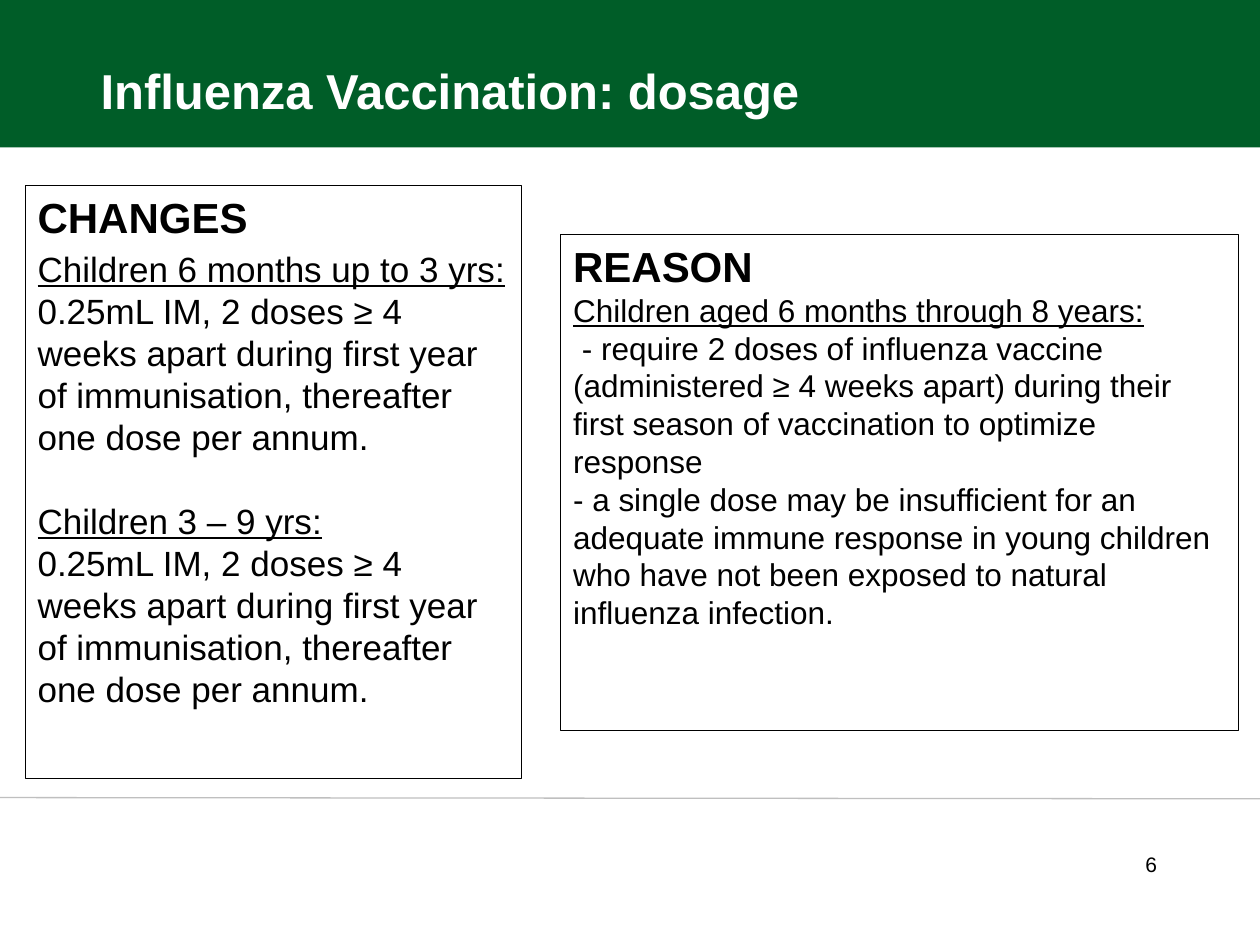
from lxml import etree
from pptx import Presentation
from pptx import util as u
from pptx.dml.color import RGBColor
from pptx.enum import shapes, text
from pptx.oxml.ns import qn

GREEN = RGBColor(0x00, 0x5D, 0x28)
GRAY = RGBColor(0xBF, 0xBF, 0xBF)
BLACK = RGBColor(0x00, 0x00, 0x00)
WHITE = RGBColor(0xFF, 0xFF, 0xFF)

DOSAGE = ("0.25mL IM, 2 doses ≥ 4 weeks apart during first year of "
          "immunisation, thereafter one dose per annum.")


class SlideBuilder:
    """Holds the style and the current slide."""

    font_name = "Arial"
    line_width = u.Pt(0.75)
    leading = 1.2

    def __init__(self, slide):
        self.slide = slide

    def rectangle(self, box, fill=None, line=None):
        shape = self.slide.shapes.add_shape(
            shapes.MSO_SHAPE.RECTANGLE, *map(u.Inches, box))
        shape.shadow.inherit = False
        if fill is None:
            shape.fill.background()
        else:
            shape.fill.solid()
            shape.fill.fore_color.rgb = fill
        if line is None:
            shape.line.fill.background()
        else:
            shape.line.color.rgb = line
            shape.line.width = self.line_width
        return shape

    def rule(self, start, end, color):
        connector = self.slide.shapes.add_connector(
            shapes.MSO_CONNECTOR.STRAIGHT, *map(u.Inches, start + end))
        connector.line.color.rgb = color
        connector.line.width = self.line_width
        etree.SubElement(connector._element.spPr, qn("a:effectLst"))

    def style_text(self, paragraph, wording, color, size, spacing=None, **font):
        paragraph.text = wording
        paragraph.font.color.rgb = color
        font_format = {"name": self.font_name, "size": u.Pt(size), **font}
        paragraph_format = {"alignment": text.PP_ALIGN.LEFT, **(spacing or {})}
        for target, values in ((paragraph.font, font_format),
                               (paragraph, paragraph_format)):
            for name, value in values.items():
                setattr(target, name, value)

    def label(self, box, wording, color, size,
              anchor=text.MSO_ANCHOR.TOP, spacing=None, **font):
        shape = self.slide.shapes.add_textbox(*map(u.Inches, box))
        frame = shape.text_frame
        frame.word_wrap = True
        frame.vertical_anchor = anchor
        self.style_text(frame.paragraphs[0], wording, color, size, spacing,
                        **font)

    def panel(self, box, heading, size, rows, heading_gap=0):
        """Outlined box; each row is (wording, underlined, points before)."""
        frame = self.rectangle(box, line=BLACK).text_frame
        frame.word_wrap = True
        frame.vertical_anchor = text.MSO_ANCHOR.TOP
        heading_size = 24
        self.style_text(frame.paragraphs[0], heading, BLACK, heading_size,
                        {"line_spacing": u.Pt(heading_size * self.leading),
                         "space_after": u.Pt(heading_gap)}, bold=True)
        for wording, underlined, before in rows:
            self.style_text(frame.add_paragraph(), wording, BLACK, size,
                            {"line_spacing": u.Pt(size * self.leading),
                             "space_before": u.Pt(before)},
                            underline=underlined)


def main():
    presentation = Presentation()
    presentation.slide_width = u.Inches(10)
    presentation.slide_height = u.Inches(7.5)
    builder = SlideBuilder(
        presentation.slides.add_slide(presentation.slide_layouts[6]))

    # Header band, footer rule and page number
    builder.rectangle((0, 0, 10, 1.17), fill=GREEN)
    builder.rule((0, 6.33), (10, 6.34), GRAY)
    builder.label((4.13, 6.71, 5.15, 0.79), "6", BLACK, 12,
                  spacing={"alignment": text.PP_ALIGN.RIGHT})

    # Title
    builder.label((0.7, -0.08, 6.08, 1.08), "Influenza Vaccination: dosage",
                  WHITE, 28, anchor=text.MSO_ANCHOR.BOTTOM, bold=True)

    # Changes and the reason for them
    builder.panel((0.2, 1.47, 3.94, 4.71), "CHANGES", 20, [
        ("Children 6 months up to 3 yrs:", True, 0),
        (DOSAGE, False, 0),
        ("Children 3 – 9 yrs:", True, 24),
        (DOSAGE, False, 0),
    ], heading_gap=3)
    builder.panel((4.45, 1.86, 5.38, 3.94), "REASON", 18, [
        ("Children aged 6 months through 8 years:", True, 0),
        (" - require 2 doses of influenza vaccine (administered ≥ 4 weeks "
         "apart) during their first season of vaccination to optimize "
         "response", False, 0),
        ("- a single dose may be insufficient for an adequate immune response "
         "in young children who have not been exposed to natural influenza "
         "infection.", False, 0),
    ])

    presentation.save("out.pptx")


if __name__ == "__main__":
    main()
